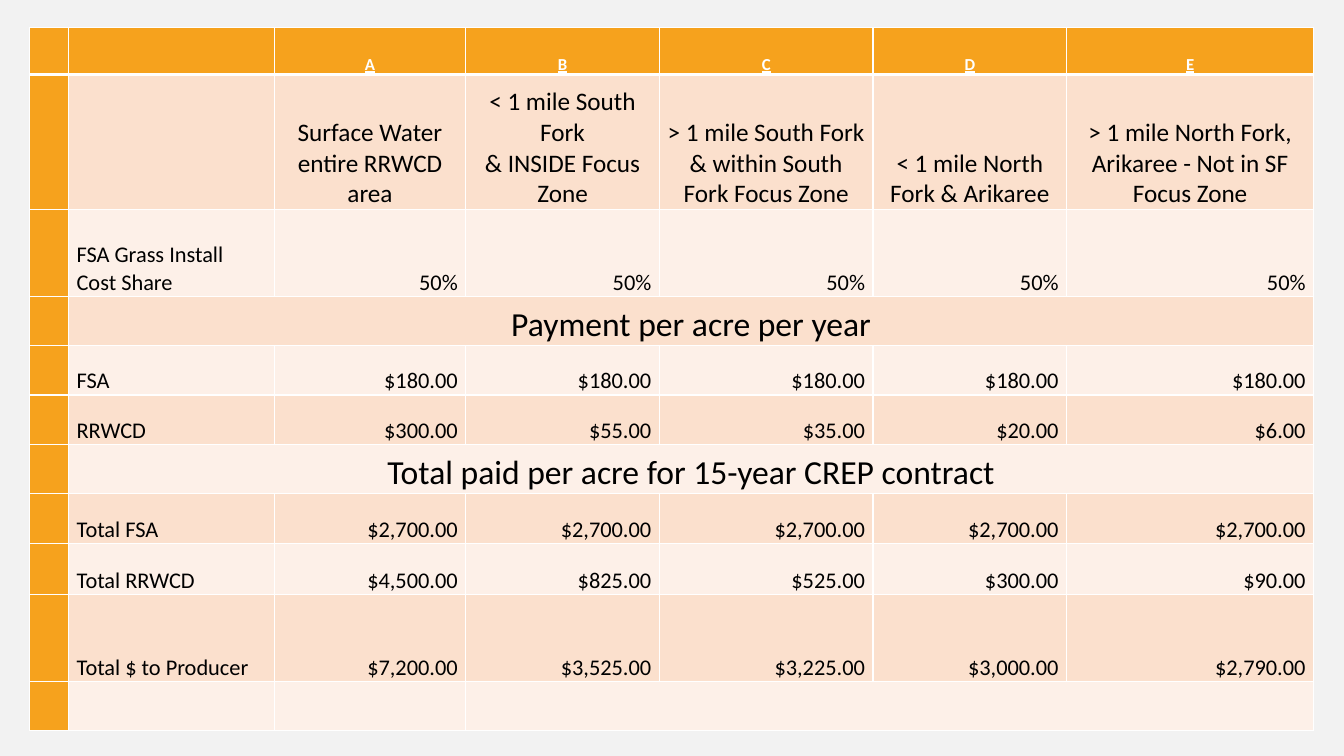
from dataclasses import dataclass

from lxml import etree
from pptx import Presentation, util as u
from pptx.dml.color import RGBColor
from pptx.enum import text
from pptx.oxml import ns


@dataclass(frozen=True)
class Theme:
    """Colours, font and type sizes of the slide."""
    background: str = "F2F2F2"
    accent: str = "F6A21D"
    bands: tuple = ("FDF0E8", "FBE0CD")
    white: str = "FFFFFF"
    black: str = "000000"
    font: str = "Calibri"
    letter: int = 12
    body: int = 16
    zone: int = 18
    section: int = 24


THEME = Theme()
LEFT, CENTER, RIGHT = text.PP_ALIGN.LEFT, text.PP_ALIGN.CENTER, text.PP_ALIGN.RIGHT
COLUMN_WIDTHS = (0.39, 2.04, 1.9, 1.92, 2.12, 1.92, 2.45)
ROW_HEIGHTS = (0.47, 1.34, 0.86, 0.49, 0.49, 0.49, 0.49, 0.49, 0.51, 0.86, 0.49)
ZONES = (
    "Surface Water entire RRWCD area",
    "< 1 mile South Fork\n& INSIDE Focus Zone",
    "> 1 mile South Fork\n& within South Fork Focus Zone",
    "< 1 mile North Fork & Arikaree",
    "> 1 mile North Fork, Arikaree - Not in SF Focus Zone",
)
CONTRACT_YEARS = 15
FSA_RATES = (180, 180, 180, 180, 180)
RRWCD_RATES = (300, 55, 35, 20, 6)


def write_text(cell, content, size=THEME.body, color=THEME.black, align=LEFT,
               bold=False, underline=False):
    """Fill a cell with formatted text, one paragraph per line."""
    cell.text_frame.text = content
    for paragraph in cell.text_frame.paragraphs:
        paragraph.alignment = align
        font = paragraph.runs[0].font
        font.name, font.size = THEME.font, u.Pt(size)
        font.bold, font.underline = bold, underline
        font.color.rgb = RGBColor.from_string(color)


def set_borders(cell, top=1, bottom=1):
    """Draw white borders around a cell, with widths in points."""
    properties = cell._tc.get_or_add_tcPr()
    widths = {"lnL": 1, "lnR": 1, "lnT": top, "lnB": bottom}
    for index, (side, width) in enumerate(widths.items()):
        line = etree.Element(ns.qn(f"a:{side}"), w=str(u.Pt(width)))
        fill = etree.SubElement(line, ns.qn("a:solidFill"))
        etree.SubElement(fill, ns.qn("a:srgbClr"), val=THEME.white)
        properties.insert(index, line)


def style_cell(cell, row, column):
    """Give a cell its fill, margins, anchor and borders."""
    is_accent = row == 0 or column == 0
    cell.fill.solid()
    cell.fill.fore_color.rgb = RGBColor.from_string(
        THEME.accent if is_accent else THEME.bands[row % 2])
    cell.margin_left = cell.margin_right = u.Inches(0.08)
    cell.margin_top = cell.margin_bottom = 0
    cell.vertical_anchor = text.MSO_ANCHOR.BOTTOM
    set_borders(cell, top=3 if row == 1 else 1, bottom=3 if row == 0 else 1)


def add_grid(slide):
    """Add the styled, empty table."""
    table = slide.shapes.add_table(
        len(ROW_HEIGHTS), len(COLUMN_WIDTHS), u.Inches(0.29), u.Inches(0.27),
        u.Inches(sum(COLUMN_WIDTHS)), u.Inches(sum(ROW_HEIGHTS))).table
    for column, width in zip(table.columns, COLUMN_WIDTHS):
        column.width = u.Inches(width)
    for row, height in zip(table.rows, ROW_HEIGHTS):
        row.height = u.Inches(height)
    for row in range(len(ROW_HEIGHTS)):
        for column in range(len(COLUMN_WIDTHS)):
            style_cell(table.cell(row, column), row, column)
    return table


def write_values(table, row, values, **style):
    """Write one value under each of the letters A to E."""
    for column, value in enumerate(values, start=2):
        write_text(table.cell(row, column), value, **style)


def write_data_row(table, row, label, values):
    """Write a labelled row of right-aligned figures."""
    write_text(table.cell(row, 1), label)
    write_values(table, row, values, align=RIGHT)


def write_section(table, row, heading):
    """Write a heading across all columns but the first."""
    table.cell(row, 1).merge(table.cell(row, 6))
    write_text(table.cell(row, 1), heading, size=THEME.section, align=CENTER)


def dollars(amounts):
    """Format amounts as dollars and cents."""
    return [f"${amount:,.2f}" for amount in amounts]


def main():
    """Build the payment table slide."""
    presentation = Presentation()
    presentation.slide_width = u.Inches(13.33)
    presentation.slide_height = u.Inches(7.5)
    slide = presentation.slides.add_slide(presentation.slide_layouts[6])
    slide.background.fill.solid()
    slide.background.fill.fore_color.rgb = RGBColor.from_string(THEME.background)

    fsa_totals = [rate * CONTRACT_YEARS for rate in FSA_RATES]
    rrwcd_totals = [rate * CONTRACT_YEARS for rate in RRWCD_RATES]
    producer_totals = [sum(pair) for pair in zip(fsa_totals, rrwcd_totals)]

    table = add_grid(slide)
    write_values(table, 0, "ABCDE", size=THEME.letter, color=THEME.white,
                 align=CENTER, bold=True, underline=True)
    write_values(table, 1, ZONES, size=THEME.zone, align=CENTER)
    write_data_row(table, 2, "FSA Grass Install Cost Share", ["50%"] * len(ZONES))
    write_section(table, 3, "Payment per acre per year")
    write_data_row(table, 4, "FSA", dollars(FSA_RATES))
    write_data_row(table, 5, "RRWCD", dollars(RRWCD_RATES))
    write_section(table, 6, "Total paid per acre for 15-year CREP contract")
    write_data_row(table, 7, "Total FSA", dollars(fsa_totals))
    write_data_row(table, 8, "Total RRWCD", dollars(rrwcd_totals))
    write_data_row(table, 9, "Total $ to Producer", dollars(producer_totals))
    table.cell(10, 3).merge(table.cell(10, 6))
    presentation.save("out.pptx")


if __name__ == "__main__":
    main()
